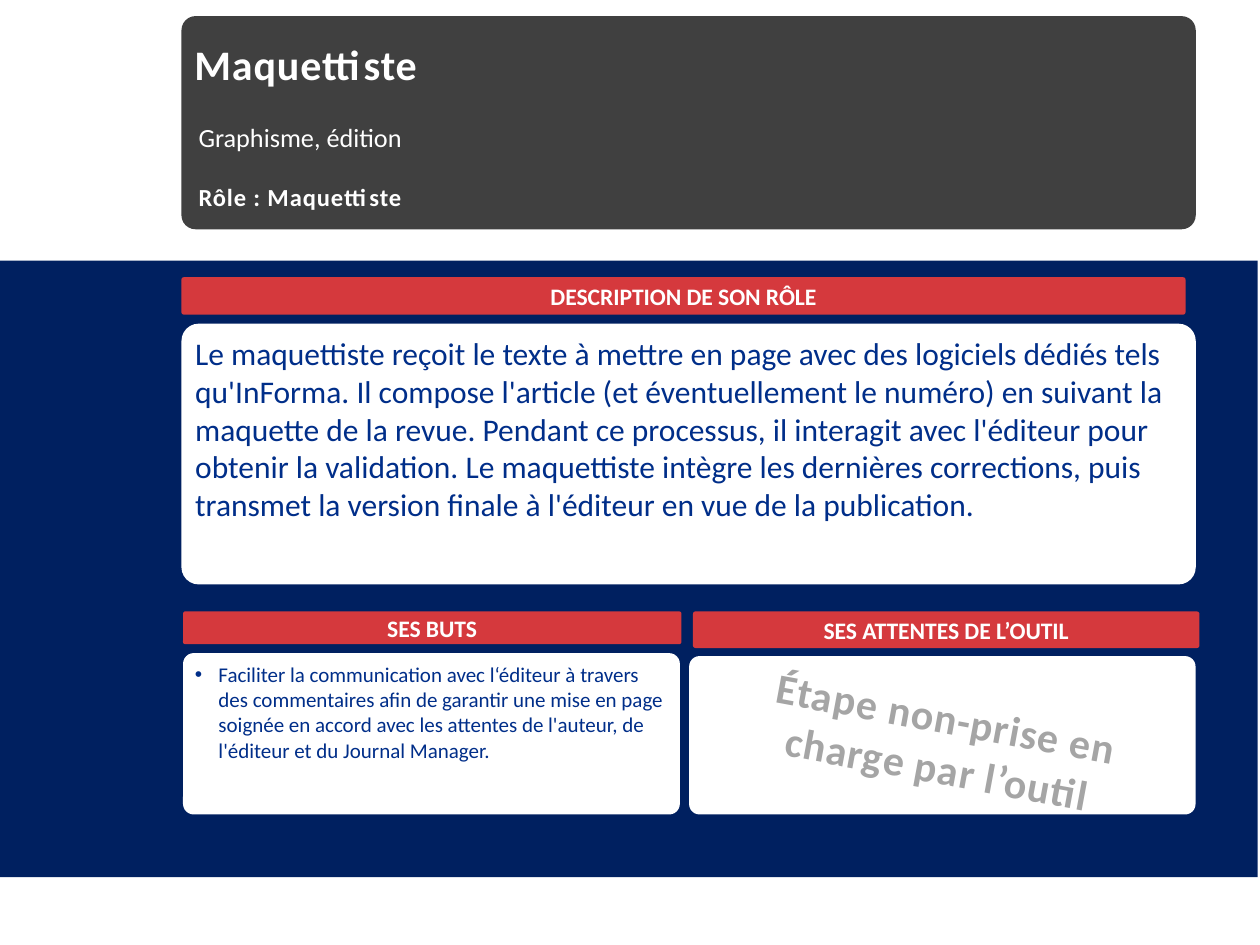
from pptx import Presentation
from pptx import util as u
from pptx.dml.color import RGBColor
from pptx.enum import shapes, text
from lxml import etree
from pptx.oxml.ns import qn

NAVY = RGBColor(0x00, 0x20, 0x60)
BLUE = RGBColor(0x00, 0x2E, 0x89)
RED = RGBColor(0xD5, 0x39, 0x3D)
CHARCOAL = RGBColor(0x40, 0x40, 0x40)
GREY = RGBColor(0xA5, 0xA5, 0xA5)
WHITE = RGBColor(0xFF, 0xFF, 0xFF)

TOP, MIDDLE = text.MSO_ANCHOR.TOP, text.MSO_ANCHOR.MIDDLE
LEFT, CENTER = text.PP_ALIGN.LEFT, text.PP_ALIGN.CENTER


class PersonaSlide:
    font = "Calibri"
    inset = (5, 3, 5, 3)
    corner = 0.066

    def __init__(self, presentation):
        self.slide = presentation.slides.add_slide(presentation.slide_layouts[5])
        self.shapes = self.slide.shapes

    def box(self, bounds, fill, kind=shapes.MSO_SHAPE.ROUNDED_RECTANGLE):
        shape = self.shapes.add_shape(kind, *map(u.Pt, bounds))
        if kind == shapes.MSO_SHAPE.ROUNDED_RECTANGLE:
            shape.adjustments[0] = self.corner
        shape.fill.solid()
        shape.fill.fore_color.rgb = fill
        shape.line.fill.background()
        shape.shadow.inherit = False
        return shape

    def frame(self, shape, anchor=TOP, inset=None):
        frame = shape.text_frame
        frame.word_wrap = True
        frame.auto_size = text.MSO_AUTO_SIZE.NONE
        frame.vertical_anchor = anchor
        (frame.margin_left, frame.margin_top,
         frame.margin_right, frame.margin_bottom) = map(u.Pt, inset or self.inset)
        return frame

    def add_words(self, paragraph, words, size, color, bold=False, align=LEFT, spacing=0):
        paragraph.alignment = align
        run = paragraph.add_run()
        run.text = words
        run.font.name = self.font
        run.font.size = u.Pt(size)
        run.font.bold = bold
        run.font.color.rgb = color
        if spacing:
            run.font._element.set("spc", str(int(spacing * 100)))

    def title(self, bounds, words):
        title = self.shapes.title
        title.left, title.top, title.width, title.height = map(u.Pt, bounds)
        paragraph = self.frame(title, MIDDLE).paragraphs[0]
        self.add_words(paragraph, words, 24, WHITE, bold=True, spacing=0.5)
        title.element.getparent().append(title.element)  # bring to front

    def heading(self, bounds, words):
        paragraph = self.frame(self.box(bounds, RED), MIDDLE).paragraphs[0]
        self.add_words(paragraph, words, 13.5, WHITE, bold=True, align=CENTER)

    def card(self, bounds, words, size, bullet=False):
        paragraph = self.frame(self.box(bounds, WHITE)).paragraphs[0]
        if bullet:
            properties = paragraph._p.get_or_add_pPr()
            properties.set("marL", str(u.Pt(13.5)))
            properties.set("indent", str(-u.Pt(13.5)))
            etree.SubElement(properties, qn("a:buFont")).set("typeface", "Arial")
            etree.SubElement(properties, qn("a:buChar")).set("char", "•")
        self.add_words(paragraph, words, size, BLUE)

    def stamp(self, bounds, words, angle):
        shape = self.shapes.add_textbox(*map(u.Pt, bounds))
        shape.rotation = angle
        paragraph = self.frame(shape, inset=(7.2, 3.6, 7.2, 3.6)).paragraphs[0]
        self.add_words(paragraph, words, 24, GREY, bold=True, align=CENTER, spacing=0.5)


def main():
    presentation = Presentation()
    presentation.slide_width, presentation.slide_height = u.Pt(720), u.Pt(540)
    persona = PersonaSlide(presentation)

    # Background band
    persona.box((0, 149, 718.6, 352.3), NAVY, shapes.MSO_SHAPE.RECTANGLE)

    # Identity header
    header = persona.box((103.7, 9.2, 579.6, 121.8), CHARCOAL)
    frame = persona.frame(header, inset=(7.4, 57.5, 5, 3))
    persona.add_words(frame.paragraphs[0], "Graphisme, édition", 15, WHITE)
    role = frame.add_paragraph()
    role.space_before = u.Pt(17)
    persona.add_words(role, "Rôle : Maquettiste", 14, WHITE, bold=True, spacing=0.5)
    persona.title((106.1, 20, 574, 33), "Maquettiste")

    # Role description
    persona.heading((103.7, 158.4, 573.8, 21.4), "DESCRIPTION DE SON RÔLE")
    persona.card(
        (103.7, 185, 579.6, 149),
        "Le maquettiste reçoit le texte à mettre en page avec des logiciels dédiés "
        "tels qu'InForma. Il compose l'article (et éventuellement le numéro) en "
        "suivant la maquette de la revue. Pendant ce processus, il interagit avec "
        "l'éditeur pour obtenir la validation. Le maquettiste intègre les dernières "
        "corrections, puis transmet la version finale à l'éditeur en vue de la "
        "publication.", 18)

    # Goals
    persona.card(
        (104.6, 373.2, 283.9, 92.2),
        "Faciliter la communication avec l‘éditeur à travers des commentaires afin "
        "de garantir une mise en page soignée en accord avec les attentes de "
        "l'auteur, de l'éditeur et du Journal Manager.", 12, bullet=True)
    persona.heading((104.6, 349.4, 284.8, 18.7), "SES BUTS")

    # Expectations of the tool
    persona.box((393.8, 374.9, 289.4, 90.5), WHITE)
    persona.heading((396, 349.4, 289.4, 20.9), "SES ATTENTES DE L’OUTIL")
    persona.stamp((399.6, 391.7, 277.2, 65.5), "Étape non-prise en charge par l’outil", 10.5)

    presentation.save("out.pptx")


if __name__ == "__main__":
    main()
